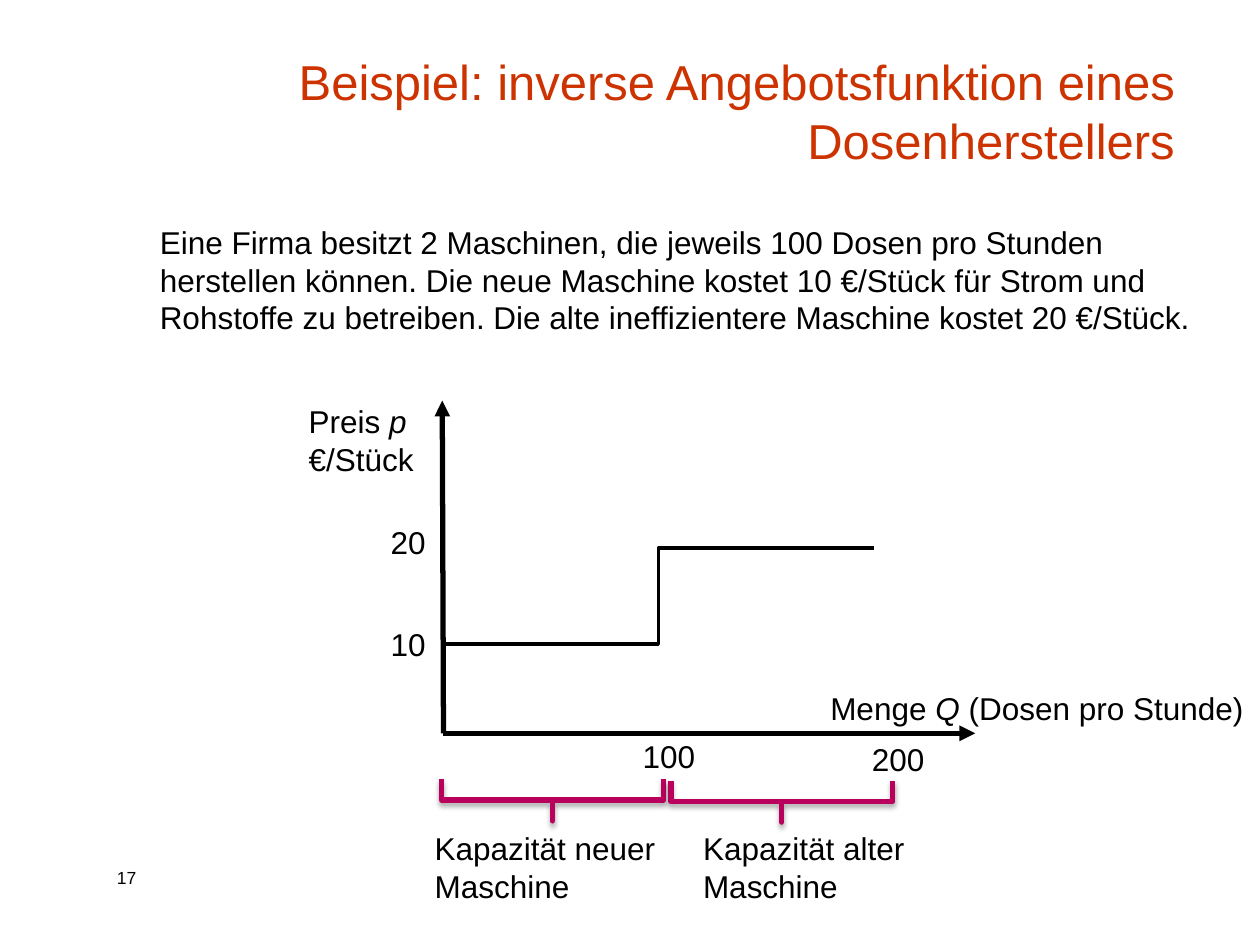
from lxml import etree
from pptx import Presentation
from pptx.dml.color import RGBColor
from pptx.enum.shapes import MSO_CONNECTOR as LINK, MSO_SHAPE as SHAPE
from pptx.enum.text import MSO_ANCHOR as ANCHOR, PP_ALIGN as ALIGN
from pptx.oxml import parse_xml
from pptx.oxml.ns import nsdecls, qn
from pptx.util import Inches, Pt

BLACK = RGBColor(0x00, 0x00, 0x00)
ORANGE = RGBColor(0xCC, 0x33, 0x00)
MAGENTA = RGBColor(0xB9, 0x00, 0x5C)

deck = Presentation()
deck.slide_width, deck.slide_height = Inches(10), Inches(7.5)
slide = deck.slides.add_slide(deck.slide_layouts[6])

# Grid: 10 columns by 7.5 rows
COL = deck.slide_width / 10
ROW = deck.slide_height / 7.5


def write(text, left, top, width, height, size=18, color=BLACK,
          align=ALIGN.LEFT, anchor=ANCHOR.TOP, inset=(0, 0)):
    """Place text; each line is a paragraph, *stars* enclose italics."""
    box = slide.shapes.add_textbox(int(left * COL), int(top * ROW),
                                   int(width * COL), int(height * ROW))
    frame = box.text_frame
    frame.word_wrap = True
    frame.vertical_anchor = anchor
    frame.margin_left = frame.margin_right = Inches(inset[0])
    frame.margin_top = frame.margin_bottom = Inches(inset[1])
    for i, line in enumerate(text.split("\n")):
        paragraph = frame.add_paragraph() if i else frame.paragraphs[0]
        paragraph.alignment = align
        for j, part in enumerate(line.split("*")):
            if part:
                run = paragraph.add_run()
                run.text = part
                run.font.name, run.font.size = "Arial", Pt(size)
                run.font.color.rgb = color
                run.font.italic = j % 2 == 1


def connect(kind, start, end, weight, arrow=False):
    """Draw a black connector between two grid points."""
    link = slide.shapes.add_connector(
        kind, int(start[0] * COL), int(start[1] * ROW),
        int(end[0] * COL), int(end[1] * ROW))
    link.line.color.rgb = BLACK
    link.line.width = Pt(weight)
    if arrow:
        etree.SubElement(link.line._get_or_add_ln(), qn("a:tailEnd"), type="triangle")
    etree.SubElement(link._element.spPr, qn("a:effectLst"))


# Slide number, title and introduction
PADDING = (0.1, 0.05)
write("17", 0.83, 6.83, 0.67, 0.26, size=10, inset=PADDING)
write("Beispiel: inverse Angebotsfunktion eines Dosenherstellers",
      2.09, 0.42, 7.33, 0.97, size=28, color=ORANGE,
      align=ALIGN.RIGHT, anchor=ANCHOR.BOTTOM, inset=PADDING)
write("Eine Firma besitzt 2 Maschinen, die jeweils 100 Dosen pro Stunden "
      "herstellen können. Die neue Maschine kostet 10 €/Stück für Strom und "
      "Rohstoffe zu betreiben. Die alte ineffizientere Maschine kostet 20 €/Stück.",
      1.17, 1.72, 8.53, 1, inset=PADDING)

# Axes and their names
origin = (3.52, 5.82)
for tip in [(7.74, 5.82), (3.51, 3.18)]:
    connect(LINK.STRAIGHT, origin, tip, 3, arrow=True)
write("Preis* p*\n€/Stück", 2.45, 3.19, 1.3, 0.6)
write("Menge* Q *(Dosen pro Stunde)", 6.59, 5.47, 3.4, 0.3)

# Supply step and axis values
connect(LINK.ELBOW, (3.51, 5.11), (6.94, 4.35), 0)
for value, left, top in [("20", 3.1, 4.15), ("10", 3.1, 4.96),
                         ("100", 5.1, 5.85), ("200", 6.92, 5.87)]:
    write(value, left, top, 1.3, 0.3)

# Capacity braces, turned to point down, with their labels
DEPTH, SPAN = 0.33, 1.76
for machine, brace_left, brace_top, label_left, label_width in [
        ("neuer", 4.22, 5.47, 3.45, 1.78), ("alter", 6.04, 5.48, 5.58, 1.65)]:
    brace = slide.shapes.add_shape(
        SHAPE.LEFT_BRACE, int(brace_left * COL), int(brace_top * ROW),
        int(DEPTH * COL), int(SPAN * ROW))
    brace.adjustments[0], brace.adjustments[1] = 0, 0.5
    brace.rotation = 90
    brace._element.spPr.xfrm.set("flipH", "1")
    brace.fill.background()
    brace.line.color.rgb = MAGENTA
    brace.line.width = Pt(3)
    brace._element.spPr.append(parse_xml(
        f'<a:effectLst {nsdecls("a")}><a:outerShdw blurRad="{Pt(3.1)}" '
        f'dist="{Pt(1.8)}" dir="5400000" rotWithShape="0"><a:srgbClr val="{BLACK}">'
        '<a:alpha val="35000"/></a:srgbClr></a:outerShdw></a:effectLst>'))
    write(f"Kapazität {machine} Maschine", label_left, 6.58, label_width, 0.6)

deck.save("out.pptx")
